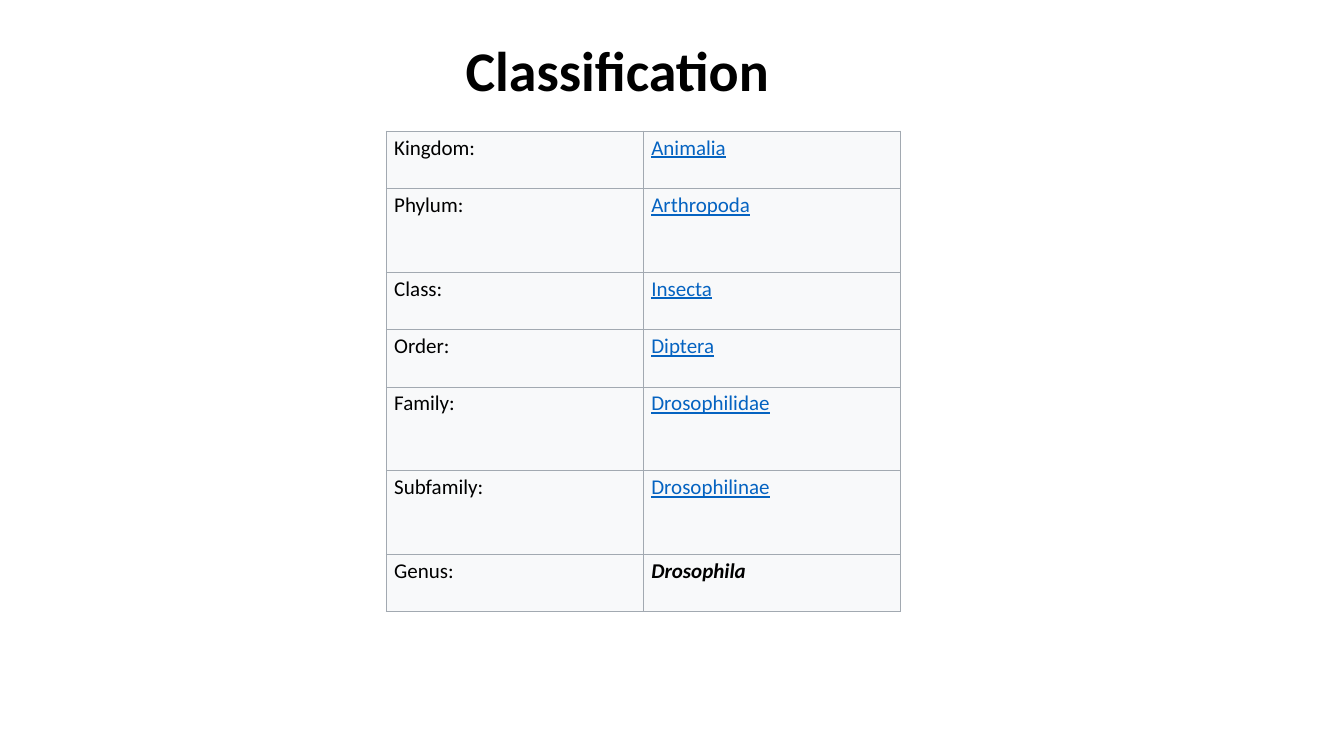
from lxml.etree import SubElement as Sub
from pptx import Presentation
from pptx.dml.color import RGBColor as RGB
from pptx.enum.text import MSO_AUTO_SIZE as Fit, PP_ALIGN as Align
from pptx.oxml.ns import qn
from pptx.util import Inches, Pt

FONT = "Calibri"
BLACK = RGB(0x00, 0x00, 0x00)
BLUE = RGB(0x05, 0x63, 0xC1)
PALE = RGB(0xF8, 0xF9, 0xFA)
GREY = RGB(0xA2, 0xA9, 0xB1)

# Rank, taxon, row height
LOW, HIGH = 0.57, 0.83
RANKS = [
    ("Kingdom:", "Animalia", LOW),
    ("Phylum:", "Arthropoda", HIGH),
    ("Class:", "Insecta", LOW),
    ("Order:", "Diptera", LOW),
    ("Family:", "Drosophilidae", HIGH),
    ("Subfamily:", "Drosophilinae", HIGH),
    ("Genus:", "Drosophila", LOW),
]
COL = 2.55


def write(frame, text, size, color=BLACK):
    run = frame.paragraphs[0].add_run()
    run.text = text
    font = run.font
    font.name, font.size = FONT, Pt(size)
    font.color.rgb = color
    return font


def border(cell):
    props = cell._tc.get_or_add_tcPr()
    for side in ("a:lnL", "a:lnR", "a:lnT", "a:lnB"):
        line = Sub(props, qn(side), w=str(Pt(0.6)))
        fill = Sub(line, qn("a:solidFill"))
        Sub(fill, qn("a:srgbClr"), val=str(GREY))


# Slide
deck = Presentation()
deck.slide_width, deck.slide_height = Inches(13.33), Inches(7.5)
slide = deck.slides.add_slide(deck.slide_layouts[6])

# Table
height = sum(rank[2] for rank in RANKS)
table = slide.shapes.add_table(
    len(RANKS), 2, Inches(3.83), Inches(1.3), Inches(2 * COL), Inches(height)
).table
table.first_row = table.horz_banding = False
for col in table.columns:
    col.width = Inches(COL)

for row, (rank, taxon, tall) in enumerate(RANKS):
    table.rows[row].height = Inches(tall)
    for col, text in enumerate((rank, taxon)):
        cell = table.cell(row, col)
        cell.margin_left = cell.margin_right = Inches(0.08)
        cell.margin_top = cell.margin_bottom = Inches(0.04)
        border(cell)
        cell.fill.solid()
        cell.fill.fore_color.rgb = PALE
        last = row == len(RANKS) - 1
        linked = col == 1 and not last
        font = write(cell.text_frame, text, 15, BLUE if linked else BLACK)
        font.underline = linked
        font.bold = font.italic = col == 1 and last

# Title
title = slide.shapes.add_textbox(
    Inches(3.45), Inches(0.3), Inches(5.47), Inches(0.77)
).text_frame
title.word_wrap = True
title.auto_size = Fit.SHAPE_TO_FIT_TEXT
title.paragraphs[0].alignment = Align.CENTER
write(title, "Classification ", 40).bold = True

deck.save("out.pptx")
